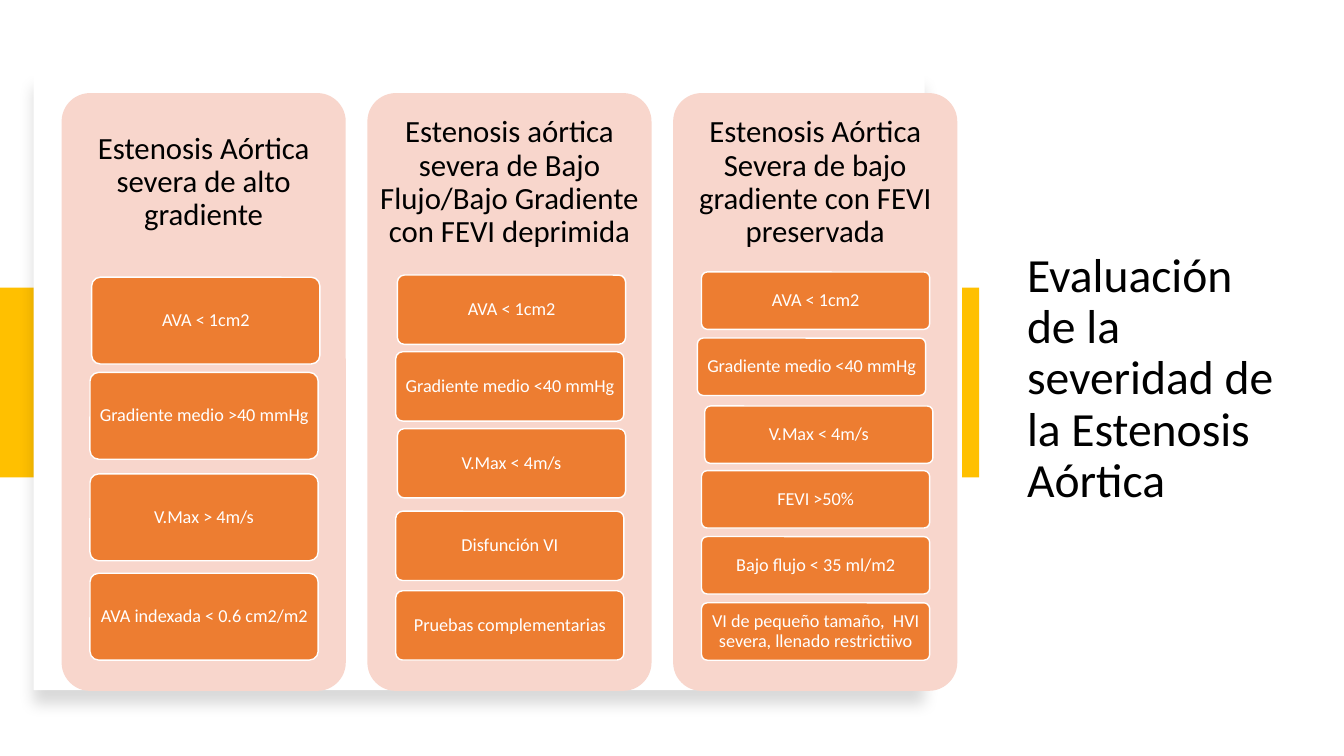
from dataclasses import dataclass

from lxml.etree import SubElement
from pptx import Presentation
from pptx.dml.color import RGBColor
from pptx.enum.shapes import MSO_SHAPE
from pptx.enum.text import MSO_ANCHOR, MSO_AUTO_SIZE, PP_ALIGN
from pptx.oxml.ns import qn
from pptx.shapes.autoshape import Shape
from pptx.slide import Slide
from pptx.util import Pt


@dataclass(frozen=True)
class Theme:
    font: str = "Calibri"
    black: str = "000000"
    white: str = "FFFFFF"
    yellow: str = "FFC000"
    pink: str = "F8D6CC"
    orange: str = "ED7D31"
    title_size: float = 34
    heading_size: float = 22
    criterion_size: float = 13


@dataclass(frozen=True)
class Box:
    left: float
    top: float
    width: float
    height: float


@dataclass(frozen=True)
class Criterion:
    text: str
    top: float
    indent: float = 20.3


@dataclass(frozen=True)
class StenosisType:
    heading: str
    criterion_height: float
    criteria: tuple[Criterion, ...]


THEME = Theme()
COLUMN = Box(44, 66.5, 203, 427)
COLUMN_PITCH = 218.4
HEADING_TOP, HEADING_HEIGHT = 73.5, 114
CRITERION_WIDTH = 163

STENOSIS_TYPES = (
    StenosisType("Estenosis Aórtica severa de alto gradiente", 62, (
        Criterion("AVA < 1cm2", 198, 21.5),
        Criterion("Gradiente medio >40 mmHg", 266),
        Criterion("V.Max > 4m/s", 338.5),
        Criterion("AVA indexada < 0.6 cm2/m2", 409.5),
    )),
    StenosisType("Estenosis aórtica severa de Bajo Flujo/Bajo Gradiente con FEVI deprimida", 49.5, (
        Criterion("AVA < 1cm2", 196.5, 21.5),
        Criterion("Gradiente medio <40 mmHg", 251.3),
        Criterion("V.Max < 4m/s", 306.2, 21.5),
        Criterion("Disfunción VI", 365.2),
        Criterion("Pruebas complementarias", 422),
    )),
    StenosisType("Estenosis Aórtica Severa de bajo gradiente con FEVI preservada", 41, (
        Criterion("AVA < 1cm2", 194.3),
        Criterion("Gradiente medio <40 mmHg", 241.5, 17.4),
        Criterion("V.Max < 4m/s", 290, 22.6),
        Criterion("FEVI >50%", 336.2),
        Criterion("Bajo flujo < 35 ml/m2", 383.3),
        Criterion("VI de pequeño tamaño,  HVI severa, llenado restrictiivo", 430.6),
    )),
)


def write(shape: Shape, text: str, size: float, color: str, inset: float,
          align: PP_ALIGN = PP_ALIGN.CENTER) -> None:
    frame = shape.text_frame
    frame.text = text
    frame.word_wrap = True
    frame.auto_size = MSO_AUTO_SIZE.NONE
    frame.vertical_anchor = MSO_ANCHOR.MIDDLE
    frame.margin_left = frame.margin_right = Pt(inset)
    frame.margin_top = frame.margin_bottom = Pt(inset)
    paragraph = frame.paragraphs[0]
    paragraph.alignment = align
    paragraph.line_spacing = 0.9
    paragraph.space_before = Pt(0)
    paragraph.font.name = THEME.font
    paragraph.font.size = Pt(size)
    paragraph.font.color.rgb = RGBColor.from_string(color)


def add_block(slide: Slide, box: Box, fill: str, rounded: bool = False,
              outlined: bool = False) -> Shape:
    kind = MSO_SHAPE.ROUNDED_RECTANGLE if rounded else MSO_SHAPE.RECTANGLE
    block = slide.shapes.add_shape(
        kind, Pt(box.left), Pt(box.top), Pt(box.width), Pt(box.height))
    block.shadow.inherit = False
    block.fill.solid()
    block.fill.fore_color.rgb = RGBColor.from_string(fill)
    if rounded:
        block.adjustments[0] = 0.1
    if outlined:
        block.line.color.rgb = RGBColor.from_string(THEME.white)
        block.line.width = Pt(1)
    else:
        block.line.fill.background()
    return block


def add_soft_shadow(block: Shape) -> None:
    effects = block.element.spPr.find(qn("a:effectLst"))
    shadow = SubElement(effects, qn("a:outerShdw"), blurRad=str(Pt(11)),
                        dist=str(Pt(10)), dir="5400000", algn="t", rotWithShape="0")
    color = SubElement(shadow, qn("a:srgbClr"), val=THEME.black)
    SubElement(color, qn("a:alpha"), val="15000")


def add_column(slide: Slide, left: float, stenosis: StenosisType) -> None:
    add_block(slide, Box(left, COLUMN.top, COLUMN.width, COLUMN.height), THEME.pink, rounded=True)
    heading = slide.shapes.add_textbox(
        Pt(left), Pt(HEADING_TOP), Pt(COLUMN.width), Pt(HEADING_HEIGHT))
    write(heading, stenosis.heading, THEME.heading_size, THEME.black, 6.5)
    for criterion in stenosis.criteria:
        place = Box(left + criterion.indent, criterion.top,
                    CRITERION_WIDTH, stenosis.criterion_height)
        card = add_block(slide, place, THEME.orange, rounded=True, outlined=True)
        write(card, criterion.text, THEME.criterion_size, THEME.white, 4.5)


def main() -> None:
    deck = Presentation()
    deck.slide_width, deck.slide_height = Pt(960), Pt(540)
    slide = deck.slides.add_slide(deck.slide_layouts[5])

    # Title
    title = slide.shapes.title
    title.left, title.top, title.width, title.height = Pt(730), Pt(159), Pt(194.5), Pt(224)
    write(title, "Evaluación de la severidad de la Estenosis Aórtica",
          THEME.title_size, THEME.black, 3.6, PP_ALIGN.LEFT)

    # Yellow accents and white panel
    add_block(slide, Box(0, 205.5, 676, 135.5), THEME.yellow)
    panel = add_block(slide, Box(24, 52.5, 636.5, 440.5), THEME.white)
    add_soft_shadow(panel)
    add_block(slide, Box(687.3, 205.5, 12.2, 135.5), THEME.yellow)

    # One column per type of stenosis
    for index, stenosis in enumerate(STENOSIS_TYPES):
        add_column(slide, COLUMN.left + index * COLUMN_PITCH, stenosis)

    deck.save("out.pptx")


if __name__ == "__main__":
    main()
